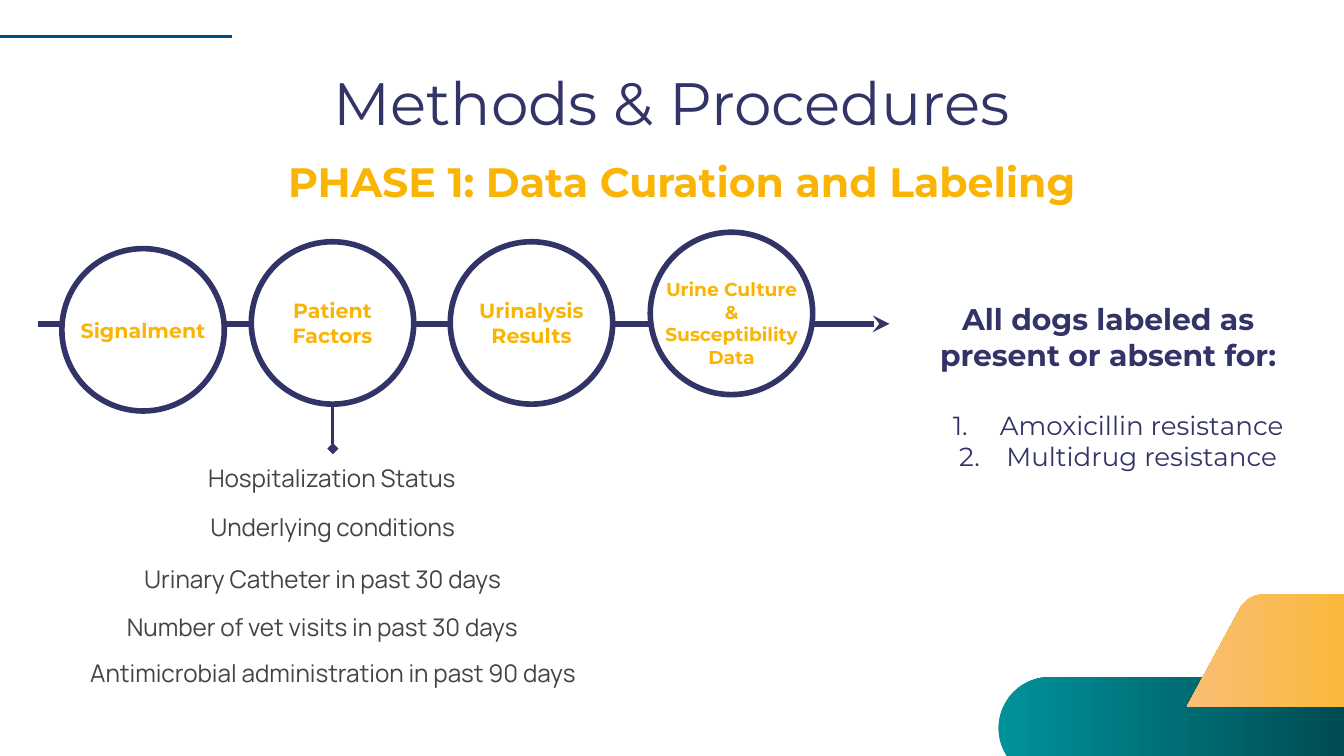
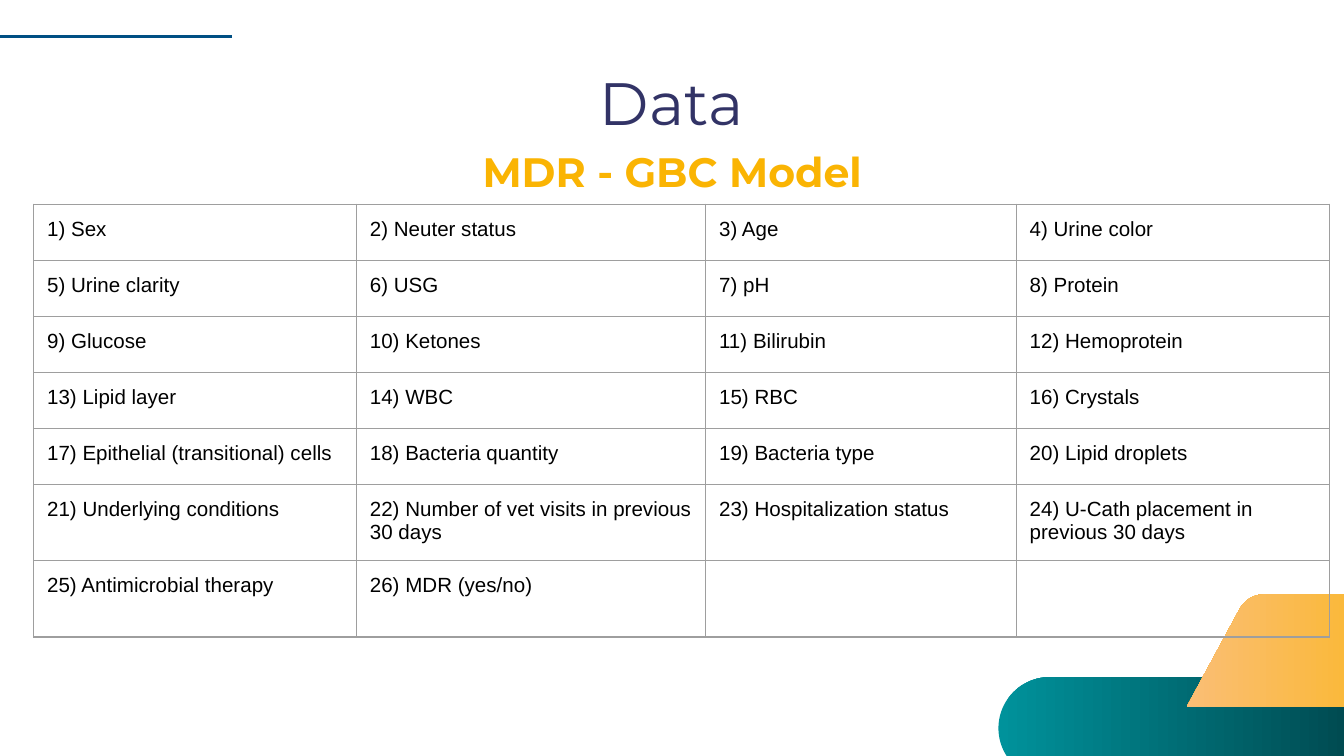
from lxml.etree import SubElement
from pptx import Presentation
from pptx.dml.color import RGBColor
from pptx.enum.shapes import MSO_CONNECTOR as LINE, MSO_SHAPE as SHAPE
from pptx.enum.text import MSO_ANCHOR as ANCHOR, PP_ALIGN as ALIGN
from pptx.oxml.ns import qn
from pptx.util import Cm, Pt

COLORS = {
    "navy": "323366", "yellow": "FAB403", "blue": "004F83", "gray": "434343",
    "white": "FFFFFF", "black": "000000", "border": "9E9E9E",
}
TEAL_STOPS = [(0, "00929B"), (100, "00373D")]
ORANGE_STOPS = [(0, "FAB403"), (34, "FAB93C"), (100, "FABE75")]

TITLE = {"name": "Montserrat", "size": Pt(32), "color": "navy"}
HEADING = {"name": "Montserrat", "size": Pt(22), "color": "yellow", "bold": True}
OUTCOME = {"name": "Montserrat", "size": Pt(16), "color": "navy", "bold": True}
RESISTANCE = {"name": "Montserrat", "size": Pt(14), "color": "navy"}
STEP = {"name": "Montserrat", "size": Pt(11), "color": "yellow", "bold": True}
SMALL_STEP = {**STEP, "size": Pt(10)}
FACTOR = {"name": "Manrope", "size": Pt(13), "color": "gray"}
CELL = {"name": "Arial", "size": Pt(11), "color": "black"}


def write(frame, lines, align=ALIGN.CENTER, anchor=ANCHOR.TOP):
    """Fill a text frame or cell with (text, format) lines; return its paragraphs."""
    for side in ("left", "right", "top", "bottom"):
        setattr(frame, f"margin_{side}", Cm(0.25))
    frame.vertical_anchor = anchor
    text_frame = getattr(frame, "text_frame", frame)
    text_frame.word_wrap = True
    text_frame.text = "\n".join(text for text, _ in lines)
    for paragraph, (_, style) in zip(text_frame.paragraphs, lines):
        paragraph.alignment = align
        for key, value in style.items():
            if key == "color":
                paragraph.font.color.rgb = RGBColor.from_string(COLORS[value])
            else:
                setattr(paragraph.font, key, value)
    return text_frame.paragraphs


def add_line(slide, start, end, color, width, **arrowheads):
    line = slide.shapes.add_connector(LINE.STRAIGHT, *map(Cm, start + end))
    line.line.color.rgb = RGBColor.from_string(COLORS[color])
    line.line.width = Pt(width)
    for end_tag, kind in arrowheads.items():
        SubElement(line.line._get_or_add_ln(), qn(f"a:{end_tag}"), type=kind)
    SubElement(line._element.spPr, qn("a:effectLst"))


prs = Presentation()
prs.slide_width, prs.slide_height = Cm(25.4), Cm(14.29)

# Shared decoration and titles
corner = [(23.93, 11.23), (23.72, 11.23), (23.52, 11.33), (23.42, 11.53)]
corner_curve = []
for step in range(9):
    t = step / 8
    weights = ((1 - t) ** 3, 3 * t * (1 - t) ** 2, 3 * t * t * (1 - t), t ** 3)
    corner_curve.append(tuple(
        Cm(sum(w * point[axis] for w, point in zip(weights, corner))) for axis in (0, 1)))
wedge_outline = [(Cm(x), Cm(y)) for x, y in [(22.43, 13.36), (25.81, 13.36), (26.95, 11.23)]]

slides = []
for title in ("Methods & Procedures", "Data"):
    slide = prs.slides.add_slide(prs.slide_layouts[6])
    slides.append(slide)
    band = slide.shapes.add_shape(
        SHAPE.ROUNDED_RECTANGLE, Cm(18.87), Cm(12.8), Cm(8.36), Cm(1.93))
    band.adjustments[0] = 0.5
    add_line(slide, (0, 0.69), (4.39, 0.69), "blue", 1.5)
    outline = slide.shapes.build_freeform(*wedge_outline[0])
    outline.add_line_segments(wedge_outline[1:] + corner_curve, close=True)
    wedge = outline.convert_to_shape()
    for part, stops, angle in ((band, TEAL_STOPS, 0), (wedge, ORANGE_STOPS, 180)):
        part.shadow.inherit = False
        part.line.fill.background()
        part.fill.gradient()
        part.fill.gradient_angle = angle
        stop_list = part._element.spPr.find(".//" + qn("a:gsLst"))
        stop_list.clear()
        for position, color in stops:
            stop = SubElement(stop_list, qn("a:gs"), pos=str(position * 1000))
            SubElement(stop, qn("a:srgbClr"), val=color)
    title_box = slide.shapes.add_textbox(Cm(1.98), Cm(0.99), Cm(21.44), Cm(1.6))
    write(title_box.text_frame, [(title, TITLE)])

methods, data = slides

# Slide 1: data curation steps
phase = methods.shapes.add_textbox(Cm(4.83), Cm(3), Cm(15.75), Cm(0.86))
write(phase.text_frame, [("PHASE 1: Data Curation and Labeling", HEADING)],
      ALIGN.RIGHT, ANCHOR.MIDDLE)

outcomes = methods.shapes.add_textbox(Cm(17.15), Cm(4.98), Cm(7.59), Cm(4.65))
intro, *resistances = write(outcomes.text_frame, [
    ("All dogs labeled as present or absent for:", OUTCOME),
    ("Amoxicillin resistance", RESISTANCE),
    ("Multidrug resistance", RESISTANCE),
], anchor=ANCHOR.MIDDLE)
intro.space_after = Pt(19.5)
for resistance in resistances:
    properties = resistance._p.get_or_add_pPr()
    properties.set("marL", str(Cm(1.27)))
    properties.set("indent", str(Cm(-0.89)))
    number_color = SubElement(properties, qn("a:buClr"))
    SubElement(number_color, qn("a:srgbClr"), val=COLORS["navy"])
    SubElement(properties, qn("a:buAutoNum"), type="arabicPeriod")

add_line(methods, (0.71, 6.12), (16.81, 6.12), "navy", 3, tailEnd="stealth")
DIAMETER = 3.07
steps = [  # text, circle left and top, label top and width, format
    ("Signalment", 1.17, 4.7, 5.79, 3.68, STEP),
    ("Patient Factors", 4.75, 4.57, 5.66, 3.38, STEP),
    ("Urinalysis Results", 8.51, 4.57, 5.66, 3.68, STEP),
    ("Urine Culture & Susceptibility Data", 12.29, 4.39, 5.66, 3.07, SMALL_STEP),
]
for text, left, top, label_top, label_width, style in steps:
    circle = methods.shapes.add_shape(
        SHAPE.OVAL, Cm(left), Cm(top), Cm(DIAMETER), Cm(DIAMETER))
    circle.shadow.inherit = False
    circle.fill.solid()
    circle.fill.fore_color.rgb = RGBColor.from_string(COLORS["white"])
    circle.line.color.rgb = RGBColor.from_string(COLORS["navy"])
    circle.line.width = Pt(3)
    label_left = left + (DIAMETER - label_width) / 2
    label = methods.shapes.add_textbox(
        Cm(label_left), Cm(label_top), Cm(label_width), Cm(0.89))
    write(label.text_frame, [(text, style)], anchor=ANCHOR.MIDDLE)

add_line(methods, (6.29, 8.48), (6.29, 7.64), "navy", 1.5, headEnd="diamond")
patient_factors = [
    ("Hospitalization Status", 3.4, 8.43, 5.74),
    ("Underlying conditions", 3.3, 9.35, 5.97),
    ("Urinary Catheter in past 30 days", 2.03, 10.34, 8.13),
    ("Number of vet visits in past 30 days", 1.91, 11.25, 8.36),
    ("Antimicrobial administration in past 90 days", 1.17, 12.12, 10.24),
]
for text, left, top, width in patient_factors:
    factor = methods.shapes.add_textbox(Cm(left), Cm(top), Cm(width), Cm(1.09))
    write(factor.text_frame, [(text, FACTOR)])[0].line_spacing = 1.15

# Slide 2: model variables
model = data.shapes.add_textbox(Cm(1.07), Cm(2.36), Cm(23.27), Cm(1.73))
write(model.text_frame, [("MDR - GBC Model", HEADING)], anchor=ANCHOR.MIDDLE)

variables = [
    "Sex", "Neuter status", "Age", "Urine color",
    "Urine clarity", "USG", "pH", "Protein",
    "Glucose", "Ketones", "Bilirubin", "Hemoprotein",
    "Lipid layer", "WBC", "RBC", "Crystals",
    "Epithelial (transitional) cells", "Bacteria quantity", "Bacteria type", "Lipid droplets",
    "Underlying conditions", "Number of vet visits in previous 30 days",
    "Hospitalization status", "U-Cath placement in previous 30 days",
    "Antimicrobial therapy", "MDR (yes/no)",
]
column_widths = [6.1, 6.6, 5.87, 5.92]
row_heights = [1.06] * 5 + [1.44] * 2
grid = data.shapes.add_table(
    len(row_heights), len(column_widths), Cm(0.64), Cm(3.86),
    Cm(sum(column_widths)), Cm(sum(row_heights))).table
grid.first_row = grid.horz_banding = False
for column, width in zip(grid.columns, column_widths):
    column.width = Cm(width)
for row, height in zip(grid.rows, row_heights):
    row.height = Cm(height)
for index, cell in enumerate(grid.iter_cells()):
    text = f"{index + 1}) {variables[index]}" if index < len(variables) else ""
    write(cell, [(text, CELL)], ALIGN.LEFT)
    cell_properties = cell._tc.get_or_add_tcPr()
    for side in ("lnL", "lnR", "lnT", "lnB"):
        border = SubElement(cell_properties, qn(f"a:{side}"), w=str(Pt(0.75)))
        border_fill = SubElement(border, qn("a:solidFill"))
        SubElement(border_fill, qn("a:srgbClr"), val=COLORS["border"])
    SubElement(cell_properties, qn("a:noFill"))

prs.save("out.pptx")
